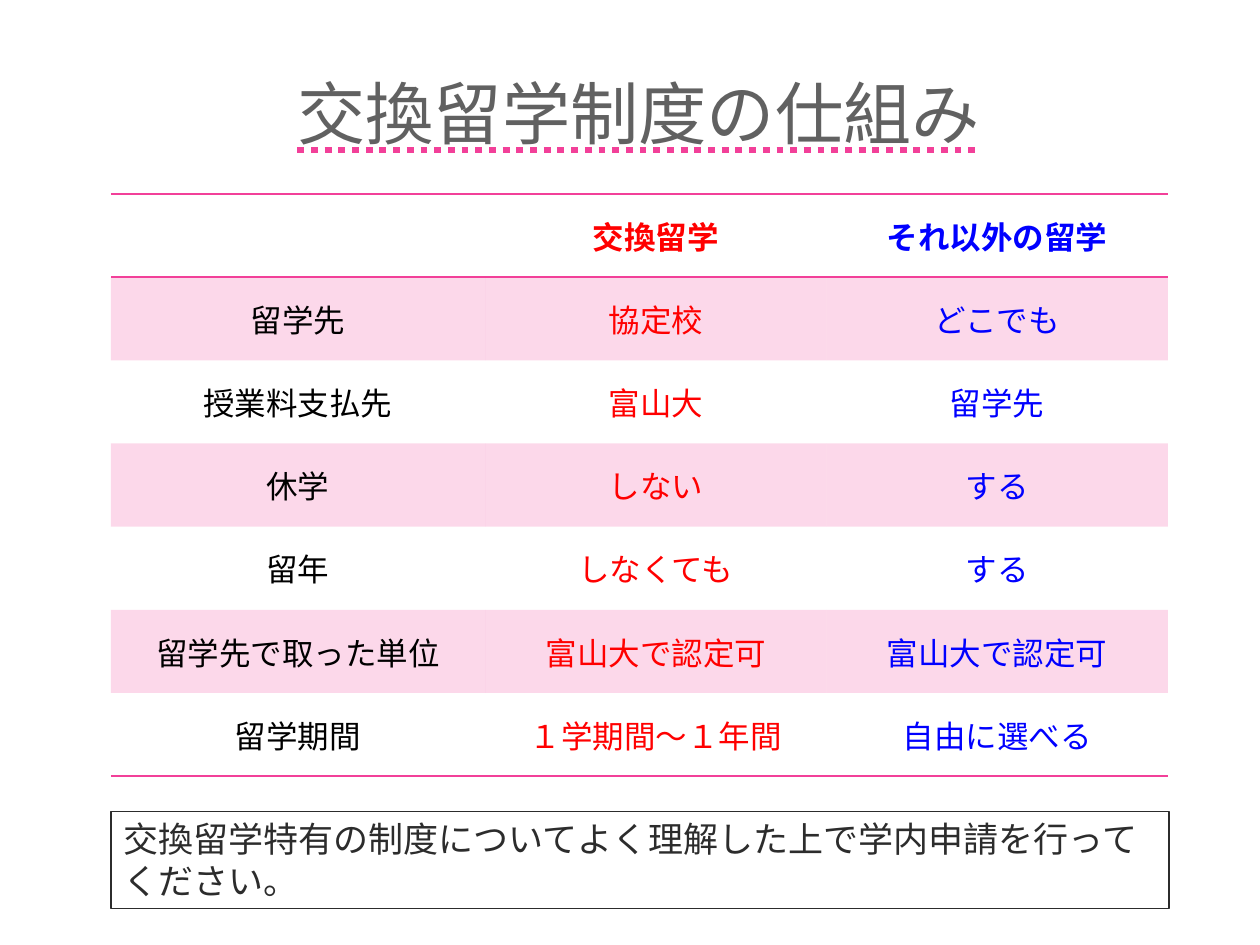
from lxml.etree import SubElement
from pptx import Presentation
from pptx.dml.color import RGBColor
from pptx.enum.shapes import MSO_SHAPE
from pptx.enum.text import MSO_ANCHOR, MSO_UNDERLINE, PP_ALIGN
from pptx.oxml import parse_xml
from pptx.oxml.ns import nsdecls, qn
from pptx.util import Inches, Pt

COLORS = {
    "pink": "F24099", "title": "616161", "ink": "2C2C2C", "white": "FFFFFF",
    "label": "000000", "exchange": "FF0000", "other": "0000FF",
}
FONT = "Calibri"
NO_STYLE = "{2D5ABB26-0587-4C30-8999-92F81FD0307C}"
ROWS = [
    ("", "交換留学", "それ以外の留学"),
    ("留学先", "協定校", "どこでも"),
    ("授業料支払先", "富山大", "留学先"),
    ("休学", "しない", "する"),
    ("留年", "しなくても", "する"),
    ("留学先で取った単位", "富山大で認定可", "富山大で認定可"),
    ("留学期間", "１学期間～１年間", "自由に選べる"),
]
COLUMN_WIDTHS = (2.97, 2.71, 2.71)
ROW_HEIGHT = 0.66


def format_text(paragraph, size, color, bold=False):
    for run in paragraph.runs:
        run.font.name = FONT
        run.font.size = Pt(size)
        run.font.bold = bold
        run.font.color.rgb = RGBColor.from_string(COLORS[color])


def add_border(cell, side):
    """Draw a thin pink line on one side of a cell: lnT or lnB."""
    cell._tc.get_or_add_tcPr().append(parse_xml(
        f'<a:{side} {nsdecls("a")} w="12700"><a:solidFill>'
        f'<a:srgbClr val="{COLORS["pink"]}"/></a:solidFill></a:{side}>'))


prs = Presentation()
prs.slide_width, prs.slide_height = Inches(10), Inches(7.5)
slide = prs.slides.add_slide(prs.slide_layouts[5])

# Title with a heavy dotted pink underline
title = slide.shapes.title
title.left, title.top = Inches(2.26), Inches(0.67)
title.width, title.height = Inches(5.63), Inches(0.64)
title.text_frame.text = "交換留学制度の仕組み"
title.text_frame.vertical_anchor = MSO_ANCHOR.TOP
heading = title.text_frame.paragraphs[0]
heading.alignment = PP_ALIGN.LEFT
heading.line_spacing = 0.75
format_text(heading, 39, "title")
heading_font = heading.runs[0].font
heading_font.underline = MSO_UNDERLINE.DOTTED_HEAVY_LINE
heading_font._element.find(qn("a:solidFill")).addnext(parse_xml(
    f'<a:uFill {nsdecls("a")}><a:solidFill>'
    f'<a:srgbClr val="{COLORS["pink"]}"/></a:solidFill></a:uFill>'))

# Comparison table
comparison = slide.shapes.add_table(
    len(ROWS), len(COLUMN_WIDTHS), Inches(0.88), Inches(1.54),
    Inches(sum(COLUMN_WIDTHS)), Inches(ROW_HEIGHT * len(ROWS))).table
comparison._tbl.tblPr.find(qn("a:tableStyleId")).text = NO_STYLE
for column, width in zip(comparison.columns, COLUMN_WIDTHS):
    column.width = Inches(width)

for r, texts in enumerate(ROWS):
    comparison.rows[r].height = Inches(ROW_HEIGHT)
    for c, (text, color) in enumerate(zip(texts, ("label", "exchange", "other"))):
        cell = comparison.cell(r, c)
        cell.vertical_anchor = MSO_ANCHOR.MIDDLE
        cell.margin_left = cell.margin_right = Inches(0.07)
        cell.margin_top = cell.margin_bottom = Inches(0.04)
        cell.text_frame.text = text
        paragraph = cell.text_frame.paragraphs[0]
        paragraph.alignment = PP_ALIGN.CENTER
        format_text(paragraph, 18, color, bold=r == 0)
        if r == 0:
            add_border(cell, "lnT")
        if r in (0, len(ROWS) - 1):
            add_border(cell, "lnB")
        if r % 2:
            cell.fill.solid()
            cell.fill.fore_color.rgb = RGBColor.from_string(COLORS["pink"])
            tint = cell._tc.tcPr.find(qn("a:solidFill")).find(qn("a:srgbClr"))
            SubElement(tint, qn("a:alpha"), val="20000")
        else:
            cell.fill.background()

# Boxed advice
advice = slide.shapes.add_shape(
    MSO_SHAPE.RECTANGLE, Inches(0.88), Inches(6.44), Inches(8.4), Inches(0.77))
advice.shadow.inherit = False
advice.fill.solid()
advice.fill.fore_color.rgb = RGBColor.from_string(COLORS["white"])
advice.line.color.rgb = RGBColor.from_string(COLORS["ink"])
advice.line.width = Pt(1)
advice.text_frame.word_wrap = True
advice.text_frame.vertical_anchor = MSO_ANCHOR.TOP
advice.text_frame.text = "交換留学特有の制度についてよく理解した上で学内申請を行ってください。"
advice.text_frame.paragraphs[0].alignment = PP_ALIGN.LEFT
format_text(advice.text_frame.paragraphs[0], 20, "ink")

prs.save("out.pptx")
